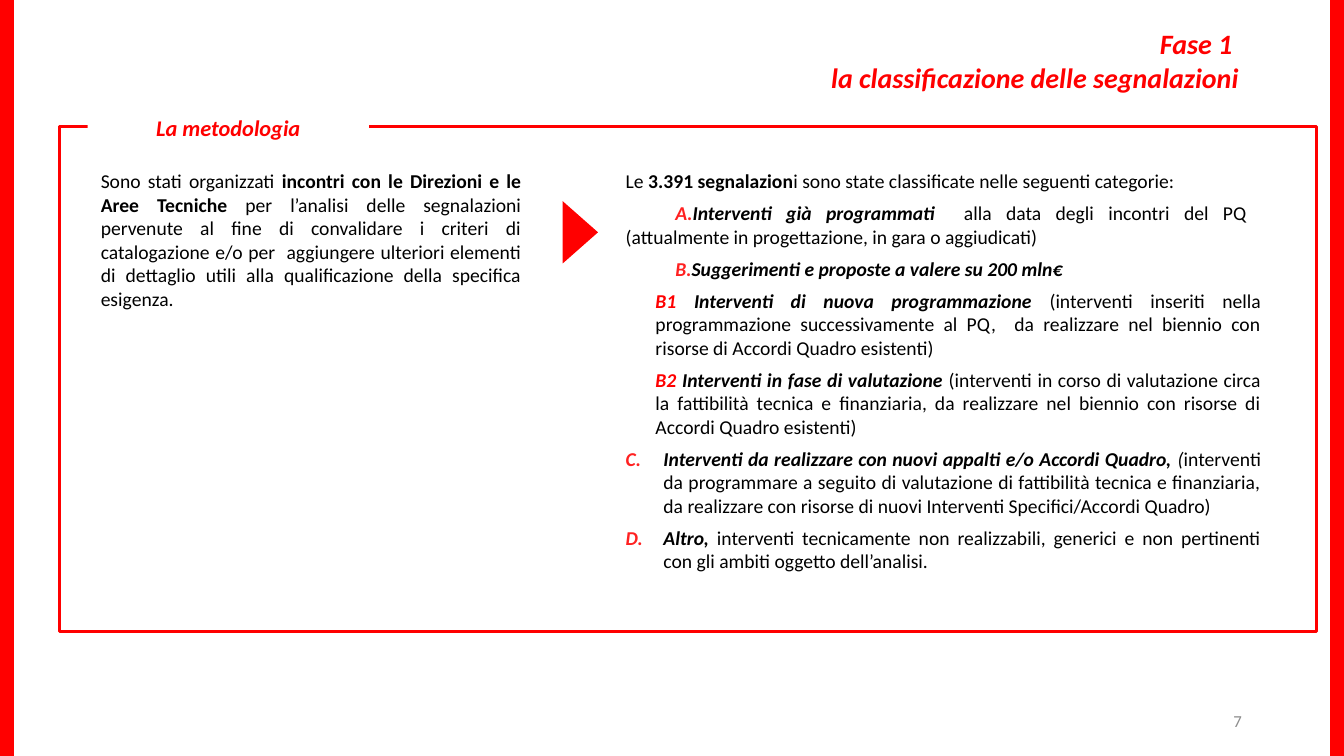
import pptx
import pptx.dml.color
import pptx.enum.shapes
import pptx.enum.text
import pptx.oxml
import pptx.oxml.ns
import pptx.util

Cm = pptx.util.Cm
Pt = pptx.util.Pt
RGBColor = pptx.dml.color.RGBColor
SHAPE = pptx.enum.shapes.MSO_SHAPE
ALIGN = pptx.enum.text.PP_ALIGN
ANCHOR = pptx.enum.text.MSO_ANCHOR

RED = RGBColor(0xFF, 0x00, 0x00)
BULLET_RED = RGBColor(0xFF, 0x21, 0x21)
BLACK = RGBColor(0x00, 0x00, 0x00)
WHITE = RGBColor(0xFF, 0xFF, 0xFF)
GREY = RGBColor(0x8C, 0x8C, 0x8C)
FONT = "Calibri"
WIDTH, HEIGHT, BAR = 33.87, 19.05, 0.34

LETTER_FIRST = dict(indent=1.25, start=1)
SUBITEM = dict(margin=0.75)
LETTER_HANGING = dict(margin=0.95, indent=-0.95, start=3)

METHOD = [([
    ("Sono stati organizzati ", ""),
    ("incontri con le Direzioni e le Aree Tecniche ", "b"),
    ("per l’analisi delle segnalazioni pervenute al fine di convalidare i criteri di "
     "catalogazione e/o per  aggiungere ulteriori elementi di dettaglio utili alla "
     "qualificazione della specifica esigenza. ", ""),
], {})]

CATEGORIES = [
    ([("Le ", ""), ("3.391 segnalazion", "b"),
      ("i sono state classificate nelle seguenti categorie:", "")], {}),
    ([("Interventi già programmati ", "bi"),
      (" alla data degli incontri del PQ  (attualmente in progettazione, in gara o "
       "aggiudicati)", "")], LETTER_FIRST),
    ([("Suggerimenti e proposte a valere su 200 mln€", "bi")], LETTER_FIRST),
    ([("B1 ", "bi", RED), ("Interventi di nuova programmazione ", "bi"),
      ("(interventi inseriti nella programmazione successivamente al PQ,  da realizzare "
       "nel biennio con risorse di Accordi Quadro esistenti)", "")], SUBITEM),
    ([("B2 ", "bi", RED), ("Interventi in fase di valutazione ", "bi"),
      ("(interventi in corso di valutazione circa la fattibilità tecnica e finanziaria, "
       "da realizzare nel biennio con risorse di Accordi Quadro esistenti)", "")], SUBITEM),
    ([("Interventi da realizzare con nuovi appalti e/o Accordi Quadro, ", "bi"), ("(", "i"),
      ("interventi da programmare a seguito di valutazione di fattibilità tecnica e "
       "finanziaria, da realizzare con risorse di nuovi Interventi Specifici/Accordi "
       "Quadro) ", "")], LETTER_HANGING),
    ([("Altro, ", "bi"),
      ("interventi tecnicamente non realizzabili, generici e non pertinenti con gli "
       "ambiti oggetto dell’analisi.", "")], LETTER_HANGING),
]


def set_indent(p, margin=0, indent=0, start=None):
    pPr = p._p.get_or_add_pPr()
    pPr.set("marL", str(Cm(margin)))
    pPr.set("indent", str(Cm(indent)))
    if start:
        ns = pptx.oxml.ns.nsdecls("a")
        for xml in (
            f'<a:buClr {ns}><a:srgbClr val="{BULLET_RED}"/></a:buClr>',
            f'<a:buFont {ns} typeface="+mj-lt"/>',
            f'<a:buAutoNum {ns} type="alphaUcPeriod" startAt="{start}"/>',
        ):
            pPr.append(pptx.oxml.parse_xml(xml))


def write_text(tf, paragraphs, size=14, color=BLACK, align=ALIGN.JUSTIFY,
               anchor=ANCHOR.TOP, after=0):
    tf.word_wrap = True
    tf.vertical_anchor = anchor
    for i, (runs, layout) in enumerate(paragraphs):
        p = tf.add_paragraph() if i else tf.paragraphs[0]
        p.alignment = align
        p.space_after = Pt(after)
        set_indent(p, **layout)
        for text, style, *own_color in runs:
            r = p.add_run()
            r.text = text
            r.font.name = FONT
            r.font.size = Pt(size)
            r.font.bold = "b" in style
            r.font.italic = "i" in style
            r.font.color.rgb = own_color[0] if own_color else color


def add_text(s, box, paragraphs, **fmt):
    sp = s.shapes.add_textbox(*map(Cm, box))
    write_text(sp.text_frame, paragraphs, **fmt)
    return sp


def add_block(s, kind, box, fill=None, line=None, line_width=1):
    sp = s.shapes.add_shape(kind, *map(Cm, box))
    sp.shadow.inherit = False
    if fill is None:
        sp.fill.background()
    else:
        sp.fill.solid()
        sp.fill.fore_color.rgb = fill
    if line is None:
        sp.line.fill.background()
    else:
        sp.line.color.rgb = line
        sp.line.width = Pt(line_width)
    return sp


def main():
    prs = pptx.Presentation()
    prs.slide_width, prs.slide_height = Cm(WIDTH), Cm(HEIGHT)
    s = prs.slides.add_slide(prs.slide_layouts[6])

    for left in (0, WIDTH - BAR):
        add_block(s, SHAPE.RECTANGLE, (left, 0, BAR, HEIGHT), fill=RED, line=RED)
    add_text(s, (23.93, 17.65, 7.62, 1.02), [([("7", "")], {})], size=12, color=GREY,
             align=ALIGN.RIGHT, anchor=ANCHOR.MIDDLE)

    add_text(s, (15.52, 4.14, 16.51, 10.52), CATEGORIES, after=6)
    arrow = add_block(s, SHAPE.ISOSCELES_TRIANGLE, (13.84, 5.41, 1.57, 0.89), fill=RED)
    arrow.rotation = 90
    add_text(s, (2.29, 4.14, 11.1, 3.84), METHOD)

    add_block(s, SHAPE.RECTANGLE, (1.5, 3.18, 31.67, 12.73), line=RED, line_width=2.25)
    label = add_block(s, SHAPE.RECTANGLE, (2.21, 2.59, 7.09, 1.27), fill=WHITE)
    write_text(label.text_frame, [([("La metodologia", "bi")], {})], size=16, color=RED,
               align=ALIGN.CENTER, anchor=ANCHOR.MIDDLE)

    title = [([("Fase 1 ", "bi")], {}),
             ([("la classificazione delle segnalazioni", "bi")], {})]
    add_text(s, (15.52, 0.89, 15.95, 1.27), title, size=20, color=RED,
             align=ALIGN.RIGHT, anchor=ANCHOR.MIDDLE)

    prs.save("out.pptx")


if __name__ == "__main__":
    main()
